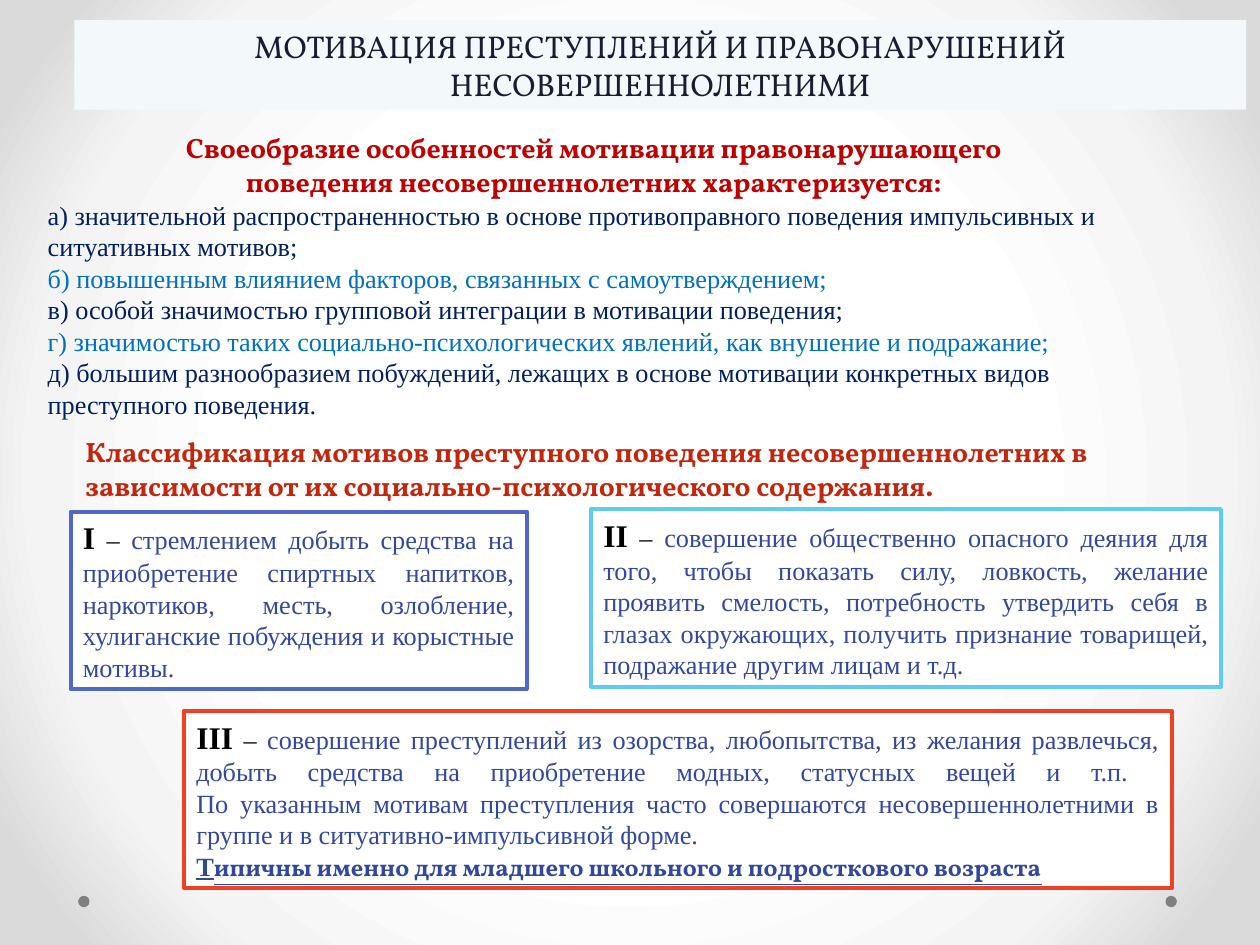
from pptx import Presentation
from pptx.dml.color import RGBColor
from pptx.enum.shapes import MSO_SHAPE
from pptx.enum.text import MSO_ANCHOR, PP_ALIGN
from pptx.oxml import parse_xml
from pptx.oxml.ns import nsdecls
from pptx.util import Inches, Pt

RECTANGLE, OVAL = MSO_SHAPE.RECTANGLE, MSO_SHAPE.OVAL
LEFT, CENTER, JUSTIFY = PP_ALIGN.LEFT, PP_ALIGN.CENTER, PP_ALIGN.JUSTIFY
TOP, MIDDLE = MSO_ANCHOR.TOP, MSO_ANCHOR.MIDDLE

SERIF, DISPLAY = "Times New Roman", "Vollkorn"
NAVY, BLUE, INDIGO, BLACK = "002060", "0070C0", "31489F", "000000"
BODY_SIZE = 15


def color(hex_value):
    return RGBColor.from_string(hex_value)


def run(text, hex_value, size=BODY_SIZE, font=SERIF, bold=False, underline=False):
    """Describe one run of text; a newline in it is a line break."""
    return text, hex_value, size, font, bold, underline


class SlideBuilder:
    def __init__(self, slide):
        self.slide = slide

    def background(self, stops):
        stop_xml = "".join(
            f'<a:gs pos="{position * 1000}"><a:srgbClr val="{hex_value}"/></a:gs>'
            for position, hex_value in stops)
        center = 'l="50000" t="50000" r="50000" b="50000"'
        self.slide.element.cSld.insert(0, parse_xml(
            f'<p:bg {nsdecls("p", "a")}><p:bgPr><a:gradFill rotWithShape="1">'
            f'<a:gsLst>{stop_xml}</a:gsLst>'
            f'<a:path path="circle"><a:fillToRect {center}/></a:path>'
            '</a:gradFill><a:effectLst/></p:bgPr></p:bg>'))

    def shape(self, kind, box, fill, line=None):
        shape = self.slide.shapes.add_shape(kind, *map(Inches, box))
        shape.shadow.inherit = False
        shape.fill.solid()
        shape.fill.fore_color.rgb = color(fill)
        if line:
            shape.line.color.rgb = color(line)
            shape.line.width = Pt(2.25)
        else:
            shape.line.fill.background()
        return shape

    def panel(self, box, paragraphs, fill="FFFFFF", line=None, align=JUSTIFY):
        shape = self.shape(RECTANGLE, box, fill, line)
        self.fill_frame(shape.text_frame, paragraphs, align, MIDDLE)

    def text(self, box, paragraphs, align=LEFT):
        shape = self.slide.shapes.add_textbox(*map(Inches, box))
        self.fill_frame(shape.text_frame, paragraphs, align, TOP)

    def fill_frame(self, frame, paragraphs, align, anchor):
        frame.word_wrap = True
        frame.vertical_anchor = anchor
        for index, runs in enumerate(paragraphs):
            paragraph = frame.add_paragraph() if index else frame.paragraphs[0]
            paragraph.alignment = align
            for text, hex_value, size, font, bold, underline in runs:
                for number, line in enumerate(text.split("\n")):
                    if number:
                        paragraph.add_line_break()
                    part = paragraph.add_run()
                    part.text = line
                    part.font.name = font
                    part.font.size = Pt(size)
                    part.font.bold = bold
                    part.font.underline = underline
                    part.font.color.rgb = color(hex_value)


def motive(numeral, text):
    return [run(numeral, BLACK, 18, bold=True), run(" – ", BLACK), run(text, INDIGO)]


def main():
    presentation = Presentation()
    presentation.slide_width, presentation.slide_height = Inches(10), Inches(7.5)
    builder = SlideBuilder(presentation.slides.add_slide(presentation.slide_layouts[6]))

    # Background and corner dots
    builder.background([(50, "FFFFFF"), (76, "F4F4F4"), (92, "DADADA")])
    for left in (9.25, 0.62):
        builder.shape(OVAL, (left, 7.11, 0.09, 0.09), "808080")

    # Title
    builder.panel((0.59, 0.16, 9.3, 0.71), [[run(
        "МОТИВАЦИЯ ПРЕСТУПЛЕНИЙ И ПРАВОНАРУШЕНИЙ НЕСОВЕРШЕННОЛЕТНИМИ",
        "191D34", 18, DISPLAY)]], fill="F3F9FB", align=CENTER)

    # Features of motivation, in alternating colours
    features = [
        "а) значительной распространенностью в основе противоправного поведения "
        "импульсивных и ситуативных мотивов;",
        "б) повышенным влиянием факторов, связанных с самоутверждением;",
        "в) особой значимостью групповой интеграции в мотивации поведения;",
        "г) значимостью таких социально-психологических явлений, как внушение и подражание;",
        "д) большим разнообразием побуждений, лежащих в основе мотивации "
        "конкретных видов преступного поведения.",
    ]
    builder.text((0.28, 1.53, 9.28, 1.87), [
        [run(feature, BLUE if index % 2 else NAVY)]
        for index, feature in enumerate(features)])

    # Section headings
    builder.text((0.78, 0.99, 7.87, 0.64), [[run(
        "Своеобразие особенностей мотивации правонарушающего поведения "
        "несовершеннолетних характеризуется:", "C00000", 16, DISPLAY, True)]], CENTER)
    builder.text((0.58, 3.4, 8.97, 0.64), [[run(
        "Классификация мотивов преступного поведения несовершеннолетних в "
        "зависимости от их социально-психологического содержания.",
        "C3260C", 16, DISPLAY, True)]])

    # Three groups of motives
    builder.panel((0.56, 4.06, 3.62, 1.41), [motive(
        "I", "стремлением добыть средства на приобретение спиртных напитков, "
        "наркотиков, месть, озлобление, хулиганские побуждения и корыстные мотивы.")],
        line="4E67C8")
    builder.panel((4.69, 4.04, 5, 1.41), [motive(
        "II", "совершение общественно опасного деяния для того, чтобы показать силу, "
        "ловкость, желание проявить смелость, потребность утвердить себя в глазах "
        "окружающих, получить признание товарищей, подражание другим лицам и т.д.")],
        line="5ECCF3")
    builder.panel((1.46, 5.64, 7.84, 1.41), [
        motive("III", "совершение преступлений из озорства, любопытства, из желания "
               "развлечься, добыть средства на приобретение модных, статусных вещей и т.п. \n"
               "По указанным мотивам преступления часто совершаются несовершеннолетними "
               "в группе и в ситуативно-импульсивной форме."),
        [run("Т", INDIGO, bold=True, underline=True),
         run("ипичны именно для младшего школьного и подросткового возраста",
             INDIGO, 14, DISPLAY, True, True)],
    ], line="F14124")

    presentation.save("out.pptx")


if __name__ == "__main__":
    main()
